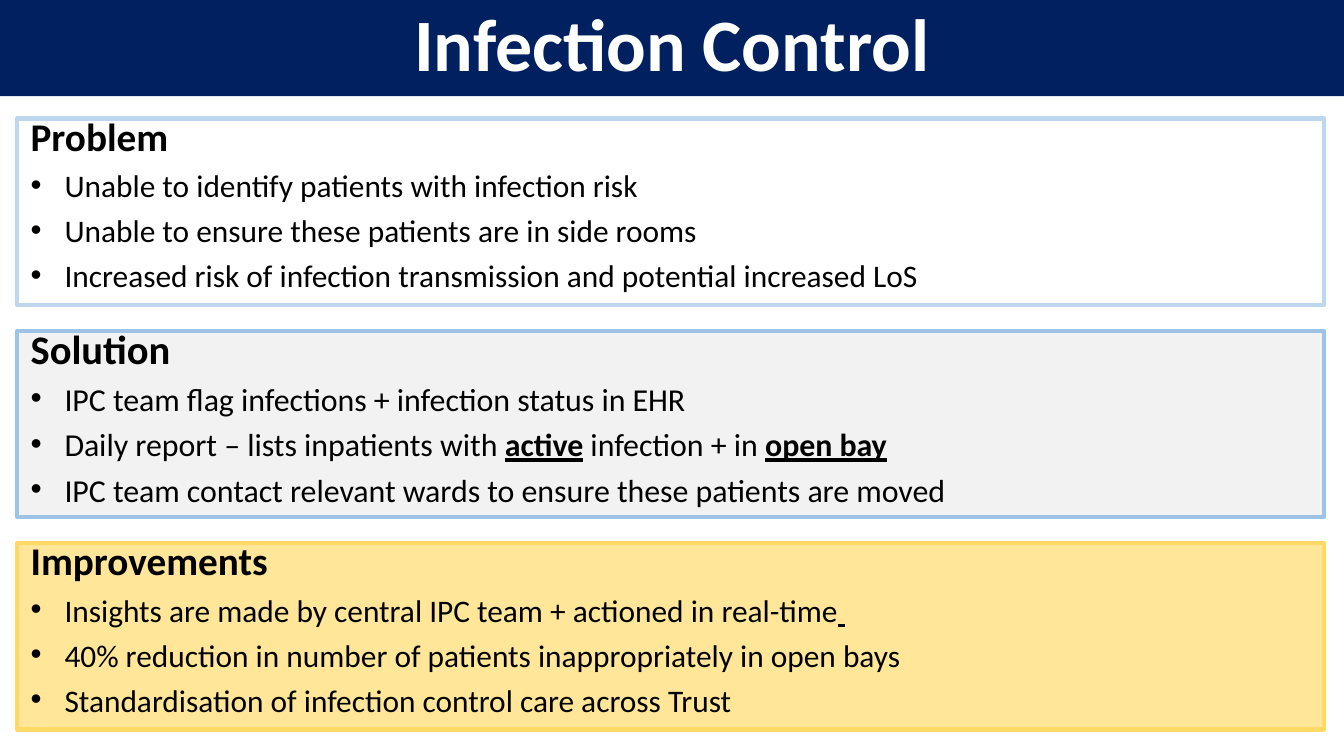
from lxml import etree
from pptx import Presentation
from pptx.dml.color import RGBColor
from pptx.enum.shapes import MSO_SHAPE
from pptx.enum.text import MSO_ANCHOR, PP_ALIGN
from pptx.oxml.ns import qn
from pptx.util import Cm, Pt

RECT = MSO_SHAPE.RECTANGLE
TOP, MIDDLE = MSO_ANCHOR.TOP, MSO_ANCHOR.MIDDLE
LEFT, CENTER = PP_ALIGN.LEFT, PP_ALIGN.CENTER

NAVY = RGBColor(0x00, 0x20, 0x60)
WHITE = RGBColor(0xFF, 0xFF, 0xFF)
BLACK = RGBColor(0x00, 0x00, 0x00)
PALE_BLUE = RGBColor(0xBD, 0xD7, 0xEE)
BLUE = RGBColor(0x9D, 0xC3, 0xE6)
GREY = RGBColor(0xF2, 0xF2, 0xF2)
CREAM = RGBColor(0xFF, 0xE6, 0x99)
GOLD = RGBColor(0xFF, 0xD9, 0x66)

FONT = "Calibri"
SLIDE_W, SLIDE_H = Cm(25.4), Cm(14.29)
BOX_LEFT, BOX_TOP, BOX_W, BOX_H = Cm(0.33), Cm(2.24), Cm(24.69), Cm(3.53)
BOX_PITCH = Cm(4.01)
INDENT = Cm(0.64)

# Heading, fill, line, heading size, bullet size, bullets.
# A bullet is a list of pieces; every second piece is emphasised.
SECTIONS = [
    ("Problem", WHITE, PALE_BLUE, 21, 16.8, [
        ["Unable to identify patients with infection risk"],
        ["Unable to ensure these patients are in side rooms"],
        ["Increased risk of infection transmission and potential increased LoS"],
    ]),
    ("Solution", GREY, BLUE, 21.7, 17.1, [
        ["IPC team flag infections + infection status in EHR"],
        ["Daily report – lists inpatients with ", "active",
         " infection + in ", "open bay"],
        ["IPC team contact relevant wards to ensure these patients are moved"],
    ]),
    ("Improvements", CREAM, GOLD, 21, 16.8, [
        ["Insights are made by central IPC team + actioned in real-time", " "],
        ["40% reduction in number of patients inappropriately in open bays"],
        ["Standardisation of infection control care across Trust"],
    ]),
]


def add_box(s, left, top, width, height, fill, line=None, anchor=TOP):
    sp = s.shapes.add_shape(RECT, left, top, width, height)
    sp.shadow.inherit = False
    sp.fill.solid()
    sp.fill.fore_color.rgb = fill
    if line is None:
        sp.line.fill.background()
    else:
        sp.line.color.rgb = line
        sp.line.width = Pt(2.25)
    tf = sp.text_frame
    tf.word_wrap = True
    tf.vertical_anchor = anchor
    return tf


def format_paragraph(p, **formats):
    for name, value in formats.items():
        setattr(p, name, value)


def add_run(p, text, size, color=BLACK, **formats):
    r = p.add_run()
    r.text = text
    r.font.color.rgb = color
    for name, value in {"name": FONT, "size": Pt(size), **formats}.items():
        setattr(r.font, name, value)


def add_bullet(p):
    pPr = p._p.get_or_add_pPr()
    pPr.set("marL", str(INDENT))
    pPr.set("indent", str(-INDENT))
    etree.SubElement(pPr, qn("a:buFont")).set("typeface", "Arial")
    etree.SubElement(pPr, qn("a:buChar")).set("char", "•")


def add_title(s, text):
    tf = add_box(s, 0, Cm(-0.03), SLIDE_W, Cm(1.85), NAVY, anchor=MIDDLE)
    p = tf.paragraphs[0]
    format_paragraph(p, alignment=CENTER, line_spacing=0.9)
    add_run(p, text, 39.6, WHITE, bold=True)


def add_section(s, top, heading, fill, line, heading_size, size, bullets):
    tf = add_box(s, BOX_LEFT, top, BOX_W, BOX_H, fill, line)
    spacing = {"alignment": LEFT, "line_spacing": 0.7, "space_before": Pt(10)}
    p = tf.paragraphs[0]
    format_paragraph(p, **spacing)
    add_run(p, heading, heading_size, bold=True)
    for pieces in bullets:
        p = tf.add_paragraph()
        format_paragraph(p, **spacing)
        add_bullet(p)
        for i, text in enumerate(pieces):
            strong = i % 2 == 1
            add_run(p, text, size, bold=strong, underline=strong)


def main():
    prs = Presentation()
    prs.slide_width, prs.slide_height = SLIDE_W, SLIDE_H
    s = prs.slides.add_slide(prs.slide_layouts[6])

    # Title band
    add_title(s, "Infection Control")

    # Three stacked sections
    for i, section in enumerate(SECTIONS):
        add_section(s, BOX_TOP + i * BOX_PITCH, *section)

    prs.save("out.pptx")


if __name__ == "__main__":
    main()
